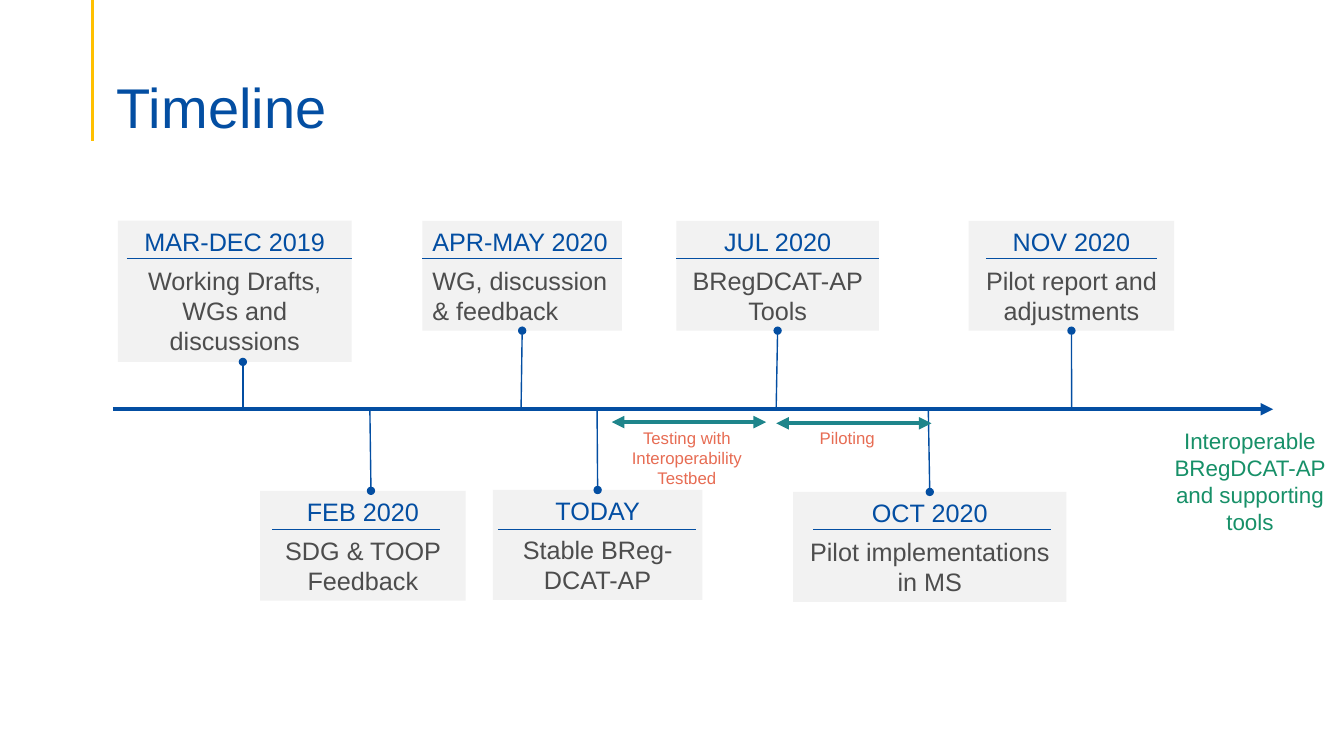
from dataclasses import dataclass

from pptx import Presentation
from pptx.dml.color import RGBColor
from pptx.enum.shapes import MSO_CONNECTOR, MSO_SHAPE
from pptx.enum.text import MSO_ANCHOR, MSO_AUTO_SIZE, PP_ALIGN
from pptx.oxml.ns import qn
from pptx.shapes.autoshape import Shape
from pptx.shapes.connector import Connector
from pptx.slide import Slide
from pptx.text.text import _Paragraph as Paragraph
from pptx.util import Pt
from lxml.etree import SubElement

BLUE = RGBColor(0x03, 0x4E, 0xA2)
YELLOW = RGBColor(0xFF, 0xC0, 0x00)
PANEL = RGBColor(0xF2, 0xF2, 0xF2)
GREY = RGBColor(0x4D, 0x4D, 0x4D)
TEAL = RGBColor(0x1E, 0x85, 0x8B)
GREEN = RGBColor(0x17, 0x90, 0x68)
CORAL = RGBColor(0xE7, 0x6C, 0x53)

FONT = "Arial"
AXIS_Y = 292.3
UPPER_TOP = 157.7
UPPER_RULE = 184.5
LOWER_RULE = 378
TOP_SITE, BOTTOM_SITE = 0, 2


@dataclass(frozen=True)
class Milestone:
    date: str
    text: str
    left: float
    top: float
    width: float
    rule_from: float
    rule_to: float
    axis_x: float
    stem_x: float
    height: float = 78.5
    align: PP_ALIGN = PP_ALIGN.CENTER


@dataclass(frozen=True)
class Phase:
    text: str
    arrow_from: float
    arrow_to: float
    arrow_y: float
    label_left: float
    label_height: float


MILESTONES = [
    Milestone("MAR-DEC 2019", "Working Drafts, WGs and discussions",
              84.2, UPPER_TOP, 167, 90.7, 251.3, 173.5, 173.5, height=100.8),
    Milestone("FEB 2020", "SDG & TOOP Feedback",
              185.8, 350.6, 146.9, 194.4, 314.6, 264.2, 265),
    Milestone("APR-MAY 2020", "WG, discussion & feedback",
              301.7, UPPER_TOP, 142.6, 301.7, 444.2, 372.2, 373, align=PP_ALIGN.LEFT),
    Milestone("TODAY", "Stable BReg-DCAT-AP",
              352, 350, 149.8, 355.7, 496.8, 426.5, 426.5),
    Milestone("JUL 2020", "BRegDCAT-AP Tools",
              483.1, UPPER_TOP, 144.7, 483.1, 627.8, 554.4, 555.5),
    Milestone("OCT 2020", "Pilot implementations in MS",
              566.6, 351.4, 195.1, 581, 751, 663.1, 664.2),
    Milestone("NOV 2020", "Pilot report and adjustments",
              691.9, UPPER_TOP, 146.9, 704.2, 826.6, 765.5, 765.5),
]

PHASES = [
    Phase("Testing with Interoperability Testbed", 437, 547.2, 301.5, 432.7, 51.1),
    Phase("Piloting", 554.4, 665.3, 302.4, 547.2, 21.6),
]


def format_runs(p: Paragraph, size: float, color: RGBColor) -> None:
    for r in p.runs:
        r.font.name = FONT
        r.font.size = Pt(size)
        r.font.color.rgb = color


def add_line(s: Slide, x1: float, y1: float, x2: float, y2: float, color: RGBColor,
             weight: float, head: str = "", tail: str = "") -> Connector:
    line = s.shapes.add_connector(MSO_CONNECTOR.STRAIGHT, Pt(x1), Pt(y1), Pt(x2), Pt(y2))
    line.line.color.rgb = color
    line.line.width = Pt(weight)
    sp_pr = line._element.spPr
    for tag, kind in (("a:headEnd", head), ("a:tailEnd", tail)):
        if kind:
            SubElement(sp_pr.find(qn("a:ln")), qn(tag), type=kind)
    SubElement(sp_pr, qn("a:effectLst"))
    return line


def add_label(s: Slide, text: str, left: float, top: float, width: float,
              height: float, size: float, color: RGBColor) -> None:
    tf = s.shapes.add_textbox(Pt(left), Pt(top), Pt(width), Pt(height)).text_frame
    tf.word_wrap = True
    tf.text = text
    p = tf.paragraphs[0]
    p.alignment = PP_ALIGN.CENTER
    format_runs(p, size, color)


def add_panel(s: Slide, m: Milestone) -> Shape:
    sp = s.shapes.add_shape(MSO_SHAPE.RECTANGLE, Pt(m.left), Pt(m.top),
                            Pt(m.width), Pt(m.height))
    sp.shadow.inherit = False
    sp.fill.solid()
    sp.fill.fore_color.rgb = PANEL
    sp.line.fill.background()
    tf = sp.text_frame
    tf.word_wrap = True
    tf.vertical_anchor = MSO_ANCHOR.MIDDLE
    tf.text = f"{m.date}\n{m.text}"
    for p, color in zip(tf.paragraphs, (BLUE, GREY)):
        p.alignment = m.align
        format_runs(p, 18, color)
    tf.paragraphs[0].space_after = Pt(6)
    return sp


def add_milestone(s: Slide, m: Milestone) -> None:
    """Draw the panel, the rule under its date and its stem from the axis."""
    panel = add_panel(s, m)
    above = m.top < AXIS_Y
    rule_y = UPPER_RULE if above else LOWER_RULE
    add_line(s, m.rule_from, rule_y, m.rule_to, rule_y, BLUE, 0.75)
    stem_y = m.top + m.height if above else m.top
    stem = add_line(s, m.axis_x, AXIS_Y, m.stem_x, stem_y, BLUE, 1, tail="oval")
    if abs(m.stem_x - (m.left + m.width / 2)) < 1:
        stem.end_connect(panel, BOTTOM_SITE if above else TOP_SITE)


def add_phase(s: Slide, phase: Phase) -> None:
    add_line(s, phase.arrow_from, phase.arrow_y, phase.arrow_to, phase.arrow_y,
             TEAL, 3, head="triangle", tail="triangle")
    add_label(s, phase.text, phase.label_left, 301.7, 115.9, phase.label_height, 12, CORAL)


def set_title(s: Slide, text: str) -> None:
    title = s.shapes.title
    title.left, title.top, title.width, title.height = Pt(76.3), Pt(38.2), Pt(828), Pt(61.9)
    tf = title.text_frame
    tf.text = text
    tf.word_wrap = True
    tf.auto_size = MSO_AUTO_SIZE.NONE
    tf.vertical_anchor = MSO_ANCHOR.BOTTOM
    tf.margin_bottom = 0
    p = tf.paragraphs[0]
    p.alignment = PP_ALIGN.LEFT
    p.line_spacing = 0.9
    format_runs(p, 40, BLUE)


def main() -> None:
    prs = Presentation()
    prs.slide_width, prs.slide_height = Pt(960), Pt(540)
    s = prs.slides.add_slide(prs.slide_layouts[5])
    add_line(s, 66.2, 0, 66.2, 100.8, YELLOW, 2.25)
    set_title(s, "Timeline")
    add_line(s, 80.6, AXIS_Y, 909.4, AXIS_Y, BLUE, 3, tail="triangle")
    for milestone in MILESTONES:
        add_milestone(s, milestone)
    for phase in PHASES:
        add_phase(s, phase)
    add_label(s, "Interoperable BRegDCAT-AP and supporting tools",
              817.9, 301.7, 149.8, 85, 16, GREEN)
    prs.save("out.pptx")


if __name__ == "__main__":
    main()
